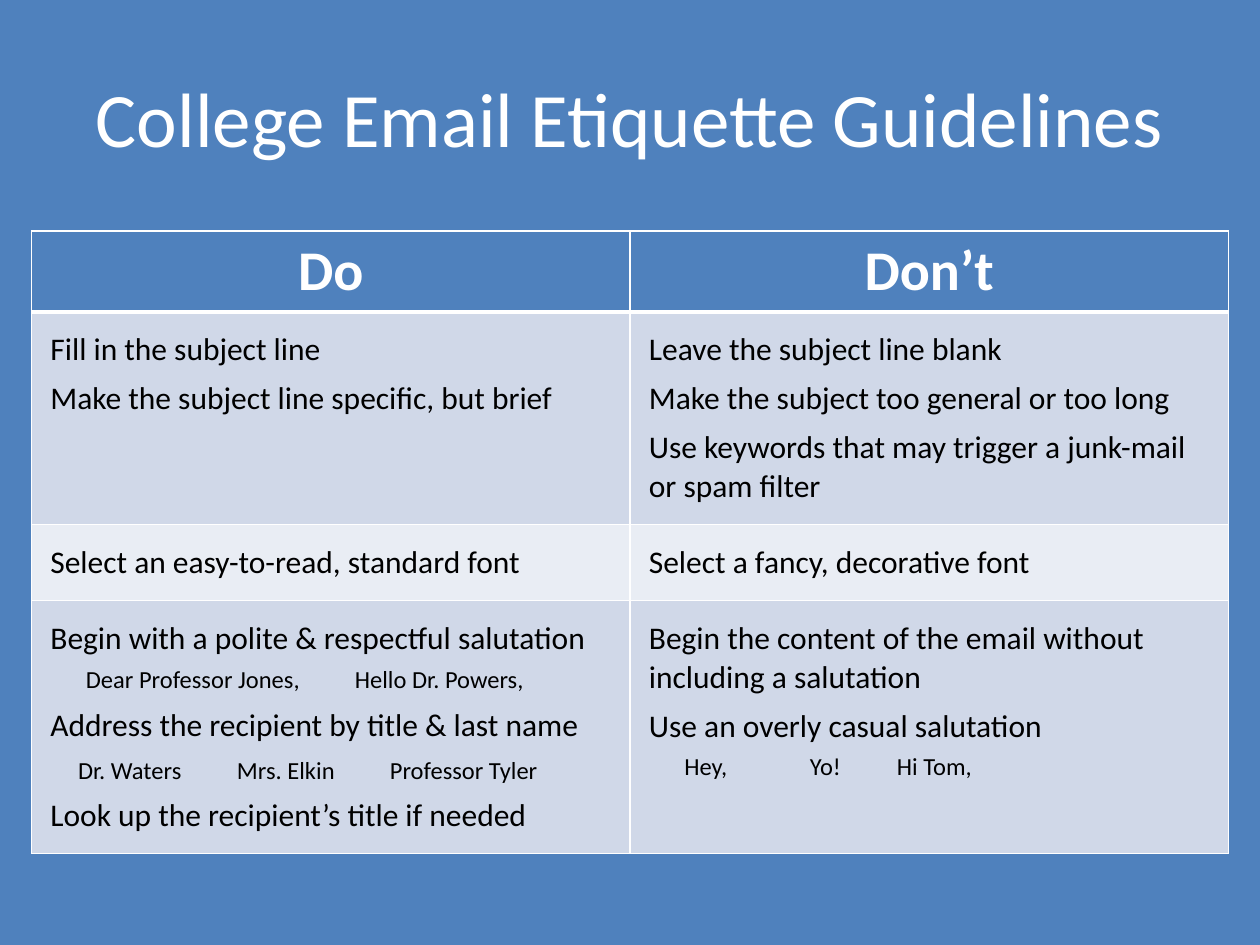
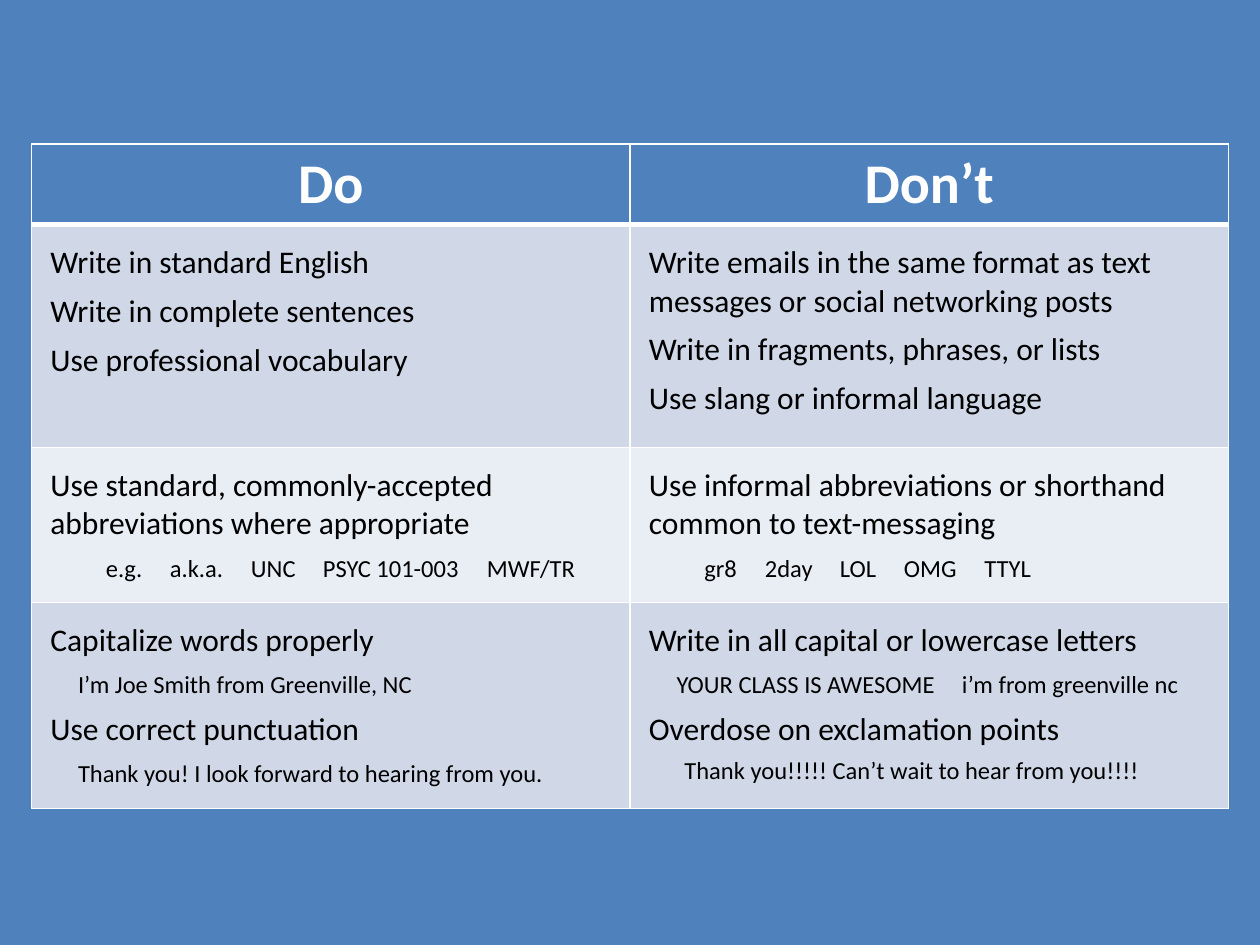
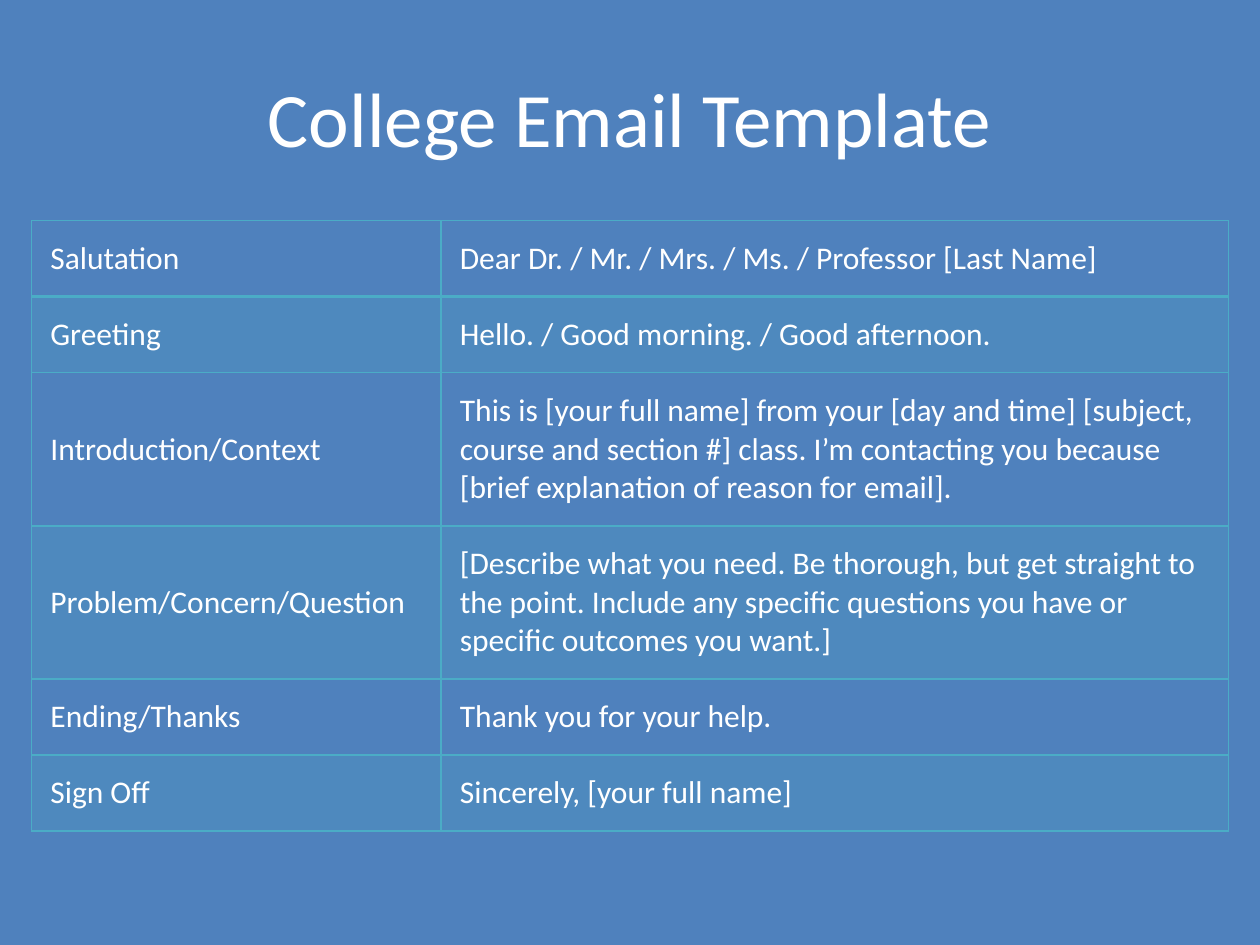
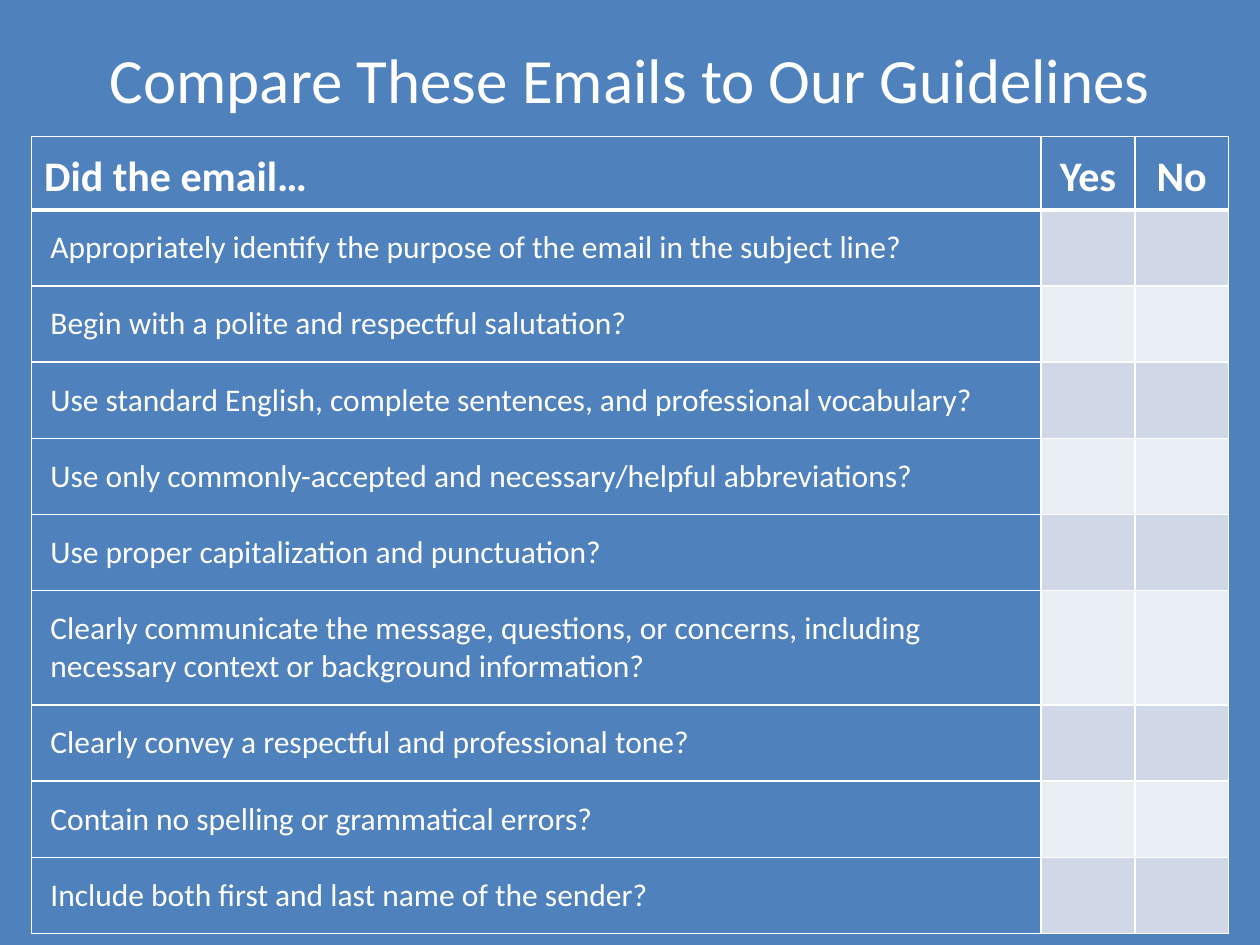
from lxml.etree import SubElement
from pptx import Presentation
from pptx.dml.color import RGBColor
from pptx.enum.text import MSO_ANCHOR as Anchor, PP_ALIGN as Align
from pptx.oxml.ns import qn
from pptx.util import Pt

COLORS = {
    "blue": "4F81BD",
    "white": "FFFFFF",
    "black": "000000",
    "band_dark": "D0D8E8",
    "band_light": "E9EDF4",
    "aqua": "4BACC6",
}
BANDS = ("band_dark", "band_light")
FONT = "Calibri"
BODY, EXAMPLE = 18, 14
TABLE_LEFT, TABLE_WIDTH = 18, 684
HEADER_HEIGHT = 46.2
LINE_ROW = 43.5  # one line of body text with its insets
INSET = 10.8


class Deck:
    def __init__(self):
        self.deck = Presentation()
        self.deck.slide_width, self.deck.slide_height = Pt(720), Pt(540)
        self.page = None

    def add_page(self):
        self.page = self.deck.slides.add_slide(self.deck.slide_layouts[6])
        fill = self.page.background.fill
        fill.solid()
        fill.fore_color.rgb = RGBColor.from_string(COLORS["blue"])

    def set_font(self, target, size, color="white", bold=False):
        font = target.font
        font.name, font.size, font.bold = FONT, Pt(size), bold
        font.color.rgb = RGBColor.from_string(COLORS[color])

    def title(self, text, size=44, left=36, top=21.6, width=648):
        box = self.page.shapes.add_textbox(Pt(left), Pt(top), Pt(width), Pt(90))
        frame = box.text_frame
        frame.word_wrap = True
        frame.vertical_anchor = Anchor.MIDDLE
        para = frame.paragraphs[0]
        para.text, para.alignment = text, Align.CENTER
        self.set_font(para, size)

    def table(self, top, widths, heights, line="white", rule=3):
        """Add an empty ruled table; the line under its first row is `rule` wide."""
        shape = self.page.shapes.add_table(
            len(heights), len(widths), Pt(TABLE_LEFT), Pt(top),
            Pt(TABLE_WIDTH), Pt(sum(heights)))
        table = shape.table
        table.first_row = table.horz_banding = False
        for column, width in zip(table.columns, widths):
            column.width = Pt(width)
        for index, (row, height) in enumerate(zip(table.rows, heights)):
            row.height = Pt(height)
            for cell in row.cells:
                self.border(cell, line, top=rule if index == 1 else 1,
                            bottom=rule if index == 0 else 1)
        return table

    def border(self, cell, color, top, bottom):
        props = cell._tc.get_or_add_tcPr()
        for side, width in (("L", 1), ("R", 1), ("T", top), ("B", bottom)):
            line = SubElement(props, qn(f"a:ln{side}"), w=str(Pt(width)))
            solid = SubElement(line, qn("a:solidFill"))
            SubElement(solid, qn("a:srgbClr"), val=COLORS[color])

    def fill(self, cell, color, opacity=100):
        """Fill a cell, or leave it clear when color is None."""
        if color is None:
            cell.fill.background()
            return
        cell.fill.solid()
        cell.fill.fore_color.rgb = RGBColor.from_string(COLORS[color])
        if opacity < 100:
            tint = cell._tc.tcPr.find(qn("a:solidFill")).find(qn("a:srgbClr"))
            SubElement(tint, qn("a:alpha"), val=str(opacity * 1000))

    def header(self, cell, text, size, align=Align.CENTER, spacing=None):
        self.fill(cell, "blue")
        para = cell.text_frame.paragraphs[0]
        para.text, para.alignment, para.line_spacing = text, align, spacing
        self.set_font(para, size, bold=True)

    def inset(self, cell):
        cell.margin_left = cell.margin_right = Pt(INSET)
        cell.margin_top = cell.margin_bottom = Pt(INSET)

    def body(self, cell, text):
        self.inset(cell)
        cell.vertical_anchor = Anchor.MIDDLE
        para = cell.text_frame.paragraphs[0]
        para.text = text
        self.set_font(para, BODY)

    def advice(self, cell, items):
        """Write each item: a sentence, or (lead sentence, {tab stop: example})."""
        self.inset(cell)
        frame = cell.text_frame
        for index, item in enumerate(items):
            para = frame.add_paragraph() if index else frame.paragraphs[0]
            para.space_after = Pt(6)
            if isinstance(item, str):
                para.text = item
                self.set_font(para, BODY, "black")
            else:
                self.examples(para, *item)

    def examples(self, para, lead, stops):
        tabs = SubElement(para._p.get_or_add_pPr(), qn("a:tabLst"))
        for stop in stops:
            SubElement(tabs, qn("a:tab"), pos=str(Pt(stop)), algn="l")
        text = "\t".join(stops.values())
        if not lead:
            para.text = "\t" + text
            self.set_font(para, EXAMPLE, "black")
            return
        spans = [(lead, BODY), ("\t", BODY), (text, EXAMPLE)]
        for index, (words, size) in enumerate(spans):
            if index == 1:
                para.add_line_break()
            span = para.add_run()
            span.text = words
            self.set_font(span, size, "black")

    def guidelines(self, top, heights, rows):
        table = self.table(top, [TABLE_WIDTH / 2] * 2, [HEADER_HEIGHT, *heights])
        for column, name in enumerate(("Do", "Don’t")):
            self.header(table.cell(0, column), name, 32)
        for index, row in enumerate(rows):
            for column, items in enumerate(row):
                cell = table.cell(index + 1, column)
                self.fill(cell, BANDS[index % 2])
                self.advice(cell, items)

    def template(self, top, heights, rows):
        table = self.table(top, [234, 450], heights, "aqua", rule=2)
        for index, row in enumerate(rows):
            for column, text in enumerate(row):
                cell = table.cell(index, column)
                self.fill(cell, "aqua" if index % 2 else None, 20)
                self.body(cell, text)

    def checklist(self, top, heights, questions):
        table = self.table(top, [577, 53.5, 53.5], heights)
        for column, name in enumerate(("Did the email…", "Yes", "No")):
            cell = table.cell(0, column)
            cell.vertical_anchor = Anchor.MIDDLE
            self.header(cell, name, 24, Align.CENTER if column else Align.LEFT, 1.15)
        for index, question in enumerate(questions):
            cell = table.cell(index + 1, 0)
            self.fill(cell, "blue")
            self.body(cell, question)
            for column in (1, 2):
                self.fill(table.cell(index + 1, column), BANDS[index % 2])


FIRST_GUIDELINES = [
    (["Fill in the subject line", "Make the subject line specific, but brief"],
     ["Leave the subject line blank",
      "Make the subject too general or too long",
      "Use keywords that may trigger a junk-mail or spam filter"]),
    (["Select an easy-to-read, standard font"],
     ["Select a fancy, decorative font"]),
    ([("Begin with a polite & respectful salutation",
       {20.3: "Dear Professor Jones,", 174: "Hello Dr. Powers,"}),
      "Address the recipient by title & last name",
      ("", {15.8: "Dr. Waters", 106.6: "Mrs. Elkin", 194: "Professor Tyler"}),
      "Look up the recipient’s title if needed"],
     ["Begin the content of the email without including a salutation",
      ("Use an overly casual salutation",
       {20.3: "Hey,", 92: "Yo!", 141.7: "Hi Tom,"})]),
]
SECOND_GUIDELINES = [
    (["Write in standard English", "Write in complete sentences",
      "Use professional vocabulary"],
     ["Write emails in the same format as text messages or social networking posts",
      "Write in fragments, phrases, or lists",
      "Use slang or informal language"]),
    (["Use standard, commonly-accepted abbreviations where appropriate",
      ("", {31.7: "e.g.", 68.3: "a.k.a.", 114.6: "UNC",
            155.7: "PSYC 101-003", 249.4: "MWF/TR"})],
     ["Use informal abbreviations or shorthand common to text-messaging",
      ("", {31.7: "gr8", 66.3: "2day", 109.1: "LOL", 145.7: "OMG", 191.7: "TTYL"})]),
    (["Capitalize words properly",
      ("", {15.8: "I’m Joe Smith from Greenville, NC"}),
      "Use correct punctuation",
      ("", {15.8: "Thank you! I look forward to hearing from you."})],
     ["Write in all capital or lowercase letters",
      ("", {15.8: "YOUR CLASS IS AWESOME", 178.9: "i’m from greenville nc"}),
      ("Overdose on exclamation points",
       {20.3: "Thank you!!!!! Can’t wait to hear from you!!!!"})]),
]
EMAIL_PARTS = [
    ("Salutation", "Dear Dr. / Mr. / Mrs. / Ms. / Professor [Last Name]"),
    ("Greeting", "Hello. / Good morning. / Good afternoon."),
    ("Introduction/Context",
     "This is [your full name] from your [day and time] [subject, course and "
     "section #] class. I’m contacting you because [brief explanation of reason "
     "for email]."),
    ("Problem/Concern/Question",
     "[Describe what you need. Be thorough, but get straight to the point. Include "
     "any specific questions you have or specific outcomes you want.]"),
    ("Ending/Thanks", "Thank you for your help."),
    ("Sign Off", "Sincerely, [your full name]"),
]
QUESTIONS = [
    "Appropriately identify the purpose of the email in the subject line?",
    "Begin with a polite and respectful salutation?",
    "Use standard English, complete sentences, and professional vocabulary?",
    "Use only commonly-accepted and necessary/helpful abbreviations?",
    "Use proper capitalization and punctuation?",
    "Clearly communicate the message, questions, or concerns, including necessary "
    "context or background information?",
    "Clearly convey a respectful and professional tone?",
    "Contain no spelling or grammatical errors?",
    "Include both first and last name of the sender?",
]


def main():
    show = Deck()
    show.add_page()
    show.title("College Email Etiquette Guidelines")
    show.guidelines(132, [121.6, LINE_ROW, 144.4], FIRST_GUIDELINES)

    show.add_page()
    show.guidelines(82.2, [127.4, 88.5, 117.7], SECOND_GUIDELINES)

    show.add_page()
    show.title("College Email Template")
    show.template(126, [LINE_ROW] * 2 + [87.5] * 2 + [LINE_ROW] * 2, EMAIL_PARTS)

    show.add_page()
    show.title("Compare These Emails to Our Guidelines", 36, left=0, top=0, width=720)
    show.checklist(78, [42] + [LINE_ROW] * 5 + [65.5] + [LINE_ROW] * 3, QUESTIONS)
    show.deck.save("out.pptx")


if __name__ == "__main__":
    main()
